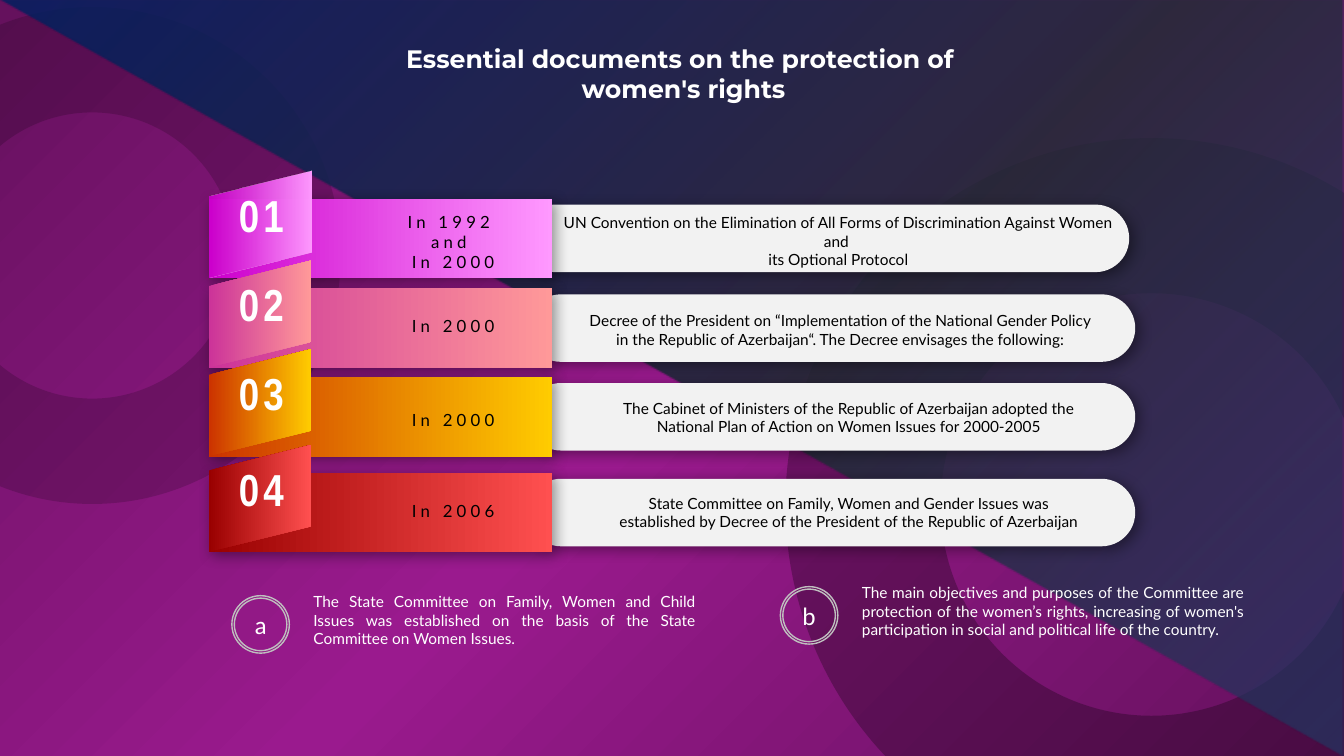
from lxml import etree
from pptx import Presentation
from pptx import util as u
from pptx.dml.color import RGBColor
from pptx.enum import shapes, text
from pptx.oxml import ns

WHITE = RGBColor(0xFF, 0xFF, 0xFF)
BLACK = RGBColor(0x00, 0x00, 0x00)
PILL_GREY = RGBColor(0xF2, 0xF2, 0xF2)
RING_GREY = RGBColor(0xBF, 0xBF, 0xBF)
PLUM = RGBColor(0x65, 0x11, 0x5D)
PURPLE = RGBColor(0x9A, 0x1A, 0x8E)
NAVY = RGBColor(0x00, 0x20, 0x60)
SLATE = RGBColor(0x22, 0x2A, 0x35)
STEEL = RGBColor(0x20, 0x38, 0x64)
MAGENTA, PINK = RGBColor(0xCC, 0x00, 0xCC), RGBColor(0xFF, 0x99, 0xFF)
ROSE, SALMON = RGBColor(0xCC, 0x33, 0x99), RGBColor(0xFF, 0x99, 0x99)
RUST, GOLD = RGBColor(0xCC, 0x33, 0x00), RGBColor(0xFF, 0xCC, 0x00)
MAROON, CORAL = RGBColor(0x99, 0x00, 0x00), RGBColor(0xFF, 0x50, 0x50)

CENTER, JUSTIFY, LEFT = text.PP_ALIGN.CENTER, text.PP_ALIGN.JUSTIFY, text.PP_ALIGN.LEFT
KIND = shapes.MSO_SHAPE

prs = Presentation()
prs.slide_width, prs.slide_height = u.Inches(13.33), u.Inches(7.5)
slide = prs.slides.add_slide(prs.slide_layouts[6])


def paint(fill, owner, stops, angle=0):
    if len(stops) == 1:
        fill.solid()
        fill.fore_color.rgb = stops[0][1]
        holder = owner.xpath(".//a:solidFill")[0]
        holder.clear()
    else:
        fill.gradient()
        holder = owner.xpath(".//a:gradFill/a:gsLst")[0]
        holder.clear()
        owner.xpath(".//a:gradFill/a:lin")[0].set("ang", str(angle * 60000))
    for position, color, opacity in stops:
        stop = holder
        if len(stops) > 1:
            stop = etree.SubElement(holder, ns.qn("a:gs"), pos=str(position * 1000))
        tint = etree.SubElement(stop, ns.qn("a:srgbClr"), val=str(color))
        if opacity < 100:
            etree.SubElement(tint, ns.qn("a:alpha"), val=str(opacity * 1000))


def write(frame, lines, font, size, color, align=CENTER, bold=False, spacing=0):
    frame.word_wrap = True
    for index, line in enumerate(lines):
        paragraph = frame.paragraphs[0] if index == 0 else frame.add_paragraph()
        paragraph.alignment = align
        run = paragraph.add_run()
        run.text = line
        run.font.name, run.font.size, run.font.bold = font, u.Pt(size), bold
        run.font.color.rgb = color
        if spacing:
            run.font._element.set("spc", str(spacing * 100))


paint(slide.background.fill, slide.element,
      [(0, PLUM, 100), (50, PURPLE, 100), (100, PLUM, 100)], 225)

backdrop = [
    (KIND.DONUT, (7.79, 1.37, 7.26, 7.27), [(0, BLACK, 27)]),
    (KIND.DONUT, (-1.55, 0.07, 4.93, 4.93), [(0, BLACK, 17)]),
    (KIND.RIGHT_TRIANGLE, (0, 0, 13.33, 7.5), [(0, NAVY, 83), (57, SLATE, 89), (100, STEEL, 66)]),
]
for kind, box, stops in backdrop:
    decor = slide.shapes.add_shape(kind, *map(u.Inches, box))
    paint(decor.fill, decor.element, stops, 225)
    decor.line.fill.background()
    decor.shadow.inherit = False
    if kind == KIND.DONUT:
        decor.adjustments[0] = 0.212
    else:
        flip = decor.element.xpath(".//a:xfrm")[0]
        flip.set("flipH", "1")
        flip.set("flipV", "1")

title = slide.shapes.add_textbox(*map(u.Inches, (2.8, 0.38, 7.96, 0.71)))
write(title.text_frame, ["Essential documents on the protection of ", "women's rights"],
      "Montserrat", 18, WHITE, bold=True)

documents = [
    (1.97, 5.17, MAGENTA, PINK, 93, (3.38, 2.05, 2.23, 0.71), ["In 1992 ", "and ", "In 2000"],
     (5.48, 2.07, 5.67, 0.66),
     ["UN Convention on the Elimination of All Forms of Discrimination Against Women ",
      "and ", "its Optional Protocol"]),
    (2.86, 5.23, ROSE, SALMON, 100, (3.59, 3.08, 1.81, 0.3), ["In 2000"],
     (5.72, 3.04, 5.23, 0.47),
     ["Decree of the President on “Implementation of the National Gender Policy "
      "in the Republic of Azerbaijan“. The Decree envisages the following:"]),
    (3.74, 5.23, RUST, GOLD, 100, (3.59, 4.02, 1.81, 0.3), ["In 2000"],
     (5.96, 3.91, 4.92, 0.47),
     ["The Cabinet of Ministers of the Republic of Azerbaijan adopted the "
      "National Plan of Action on Women Issues for 2000-2005"]),
    (4.69, 5.23, MAROON, CORAL, 100, (3.59, 4.92, 1.81, 0.3), ["In 2006"],
     (5.96, 4.85, 4.92, 0.47),
     ["State Committee on Family, Women and Gender Issues was "
      "established by Decree of the President of the Republic of Azerbaijan"]),
]
for number, (top, pill_left, dark, light, opacity, year_box, years,
             document_box, document) in enumerate(documents, 1):
    blend = [(0, dark, 100), (100, light, 100)]
    parts = [
        (KIND.ROUNDED_RECTANGLE, (pill_left, top + 0.06, 6.03, 0.67), [(0, PILL_GREY, 100)], 0),
        (KIND.RECTANGLE, (2.07, top, 3.41, 0.79), blend, 0),
        (KIND.PARALLELOGRAM, (2.05, top - 0.25, 1.06, 1.01),
         [(0, dark, opacity), (100, light, 100)], 270),
    ]
    for kind, box, stops, angle in parts:
        part = slide.shapes.add_shape(kind, *map(u.Inches, box))
        paint(part.fill, part.element, stops, angle)
        part.line.fill.background()
        part.shadow.inherit = False
        if kind == KIND.PARALLELOGRAM:
            part.rotation = 270
            part.element.xpath(".//a:xfrm")[0].set("flipV", "1")
            continue
        if kind == KIND.ROUNDED_RECTANGLE:
            part.adjustments[0] = 0.5
        shadow = etree.SubElement(part.element.xpath(".//a:effectLst")[0], ns.qn("a:outerShdw"),
                                  blurRad=str(u.Pt(10)), dist=str(u.Pt(3)), dir=str(45 * 60000))
        shade = etree.SubElement(shadow, ns.qn("a:srgbClr"), val=str(BLACK))
        etree.SubElement(shade, ns.qn("a:alpha"), val="40000")

    captions = [
        (year_box, years, "Lato", 12, BLACK, CENTER, False, 3),
        (document_box, document, "Lato", 11, BLACK, CENTER, False, 0),
        ((2.27, top - 0.16, 2.17, 0.64), [f"{number:02}"], "Arial Narrow", 32, WHITE, LEFT, True, 3),
    ]
    for box, *content in captions:
        caption = slide.shapes.add_textbox(*map(u.Inches, box))
        write(caption.text_frame, *content)

notes = [
    ("b", 7.74, 5.82, 0.84,
     "The main objectives and purposes of the Committee are protection of the women’s rights, "
     "increasing of women's participation in social and political life of the country."),
    ("a", 2.3, 5.91, 0.66,
     "The State Committee on Family, Women and Child Issues was established on the basis "
     "of the State Committee on Women Issues."),
]
for letter, left, top, height, note in notes:
    ring = slide.shapes.add_shape(KIND.DONUT, *map(u.Inches, (left, top, 0.57, 0.57)))
    ring.adjustments[0] = 0.043
    ring.fill.background()
    ring.line.color.rgb = RING_GREY
    ring.line.width = u.Pt(1)
    ring.shadow.inherit = False
    ring.text_frame.vertical_anchor = text.MSO_ANCHOR.MIDDLE
    write(ring.text_frame, [letter], "Calibri", 18, WHITE)
    remark = slide.shapes.add_textbox(*map(u.Inches, (left + 0.71, top - 0.08, 3.99, height)))
    write(remark.text_frame, [note], "Lato", 11, WHITE, JUSTIFY)

prs.save("out.pptx")
